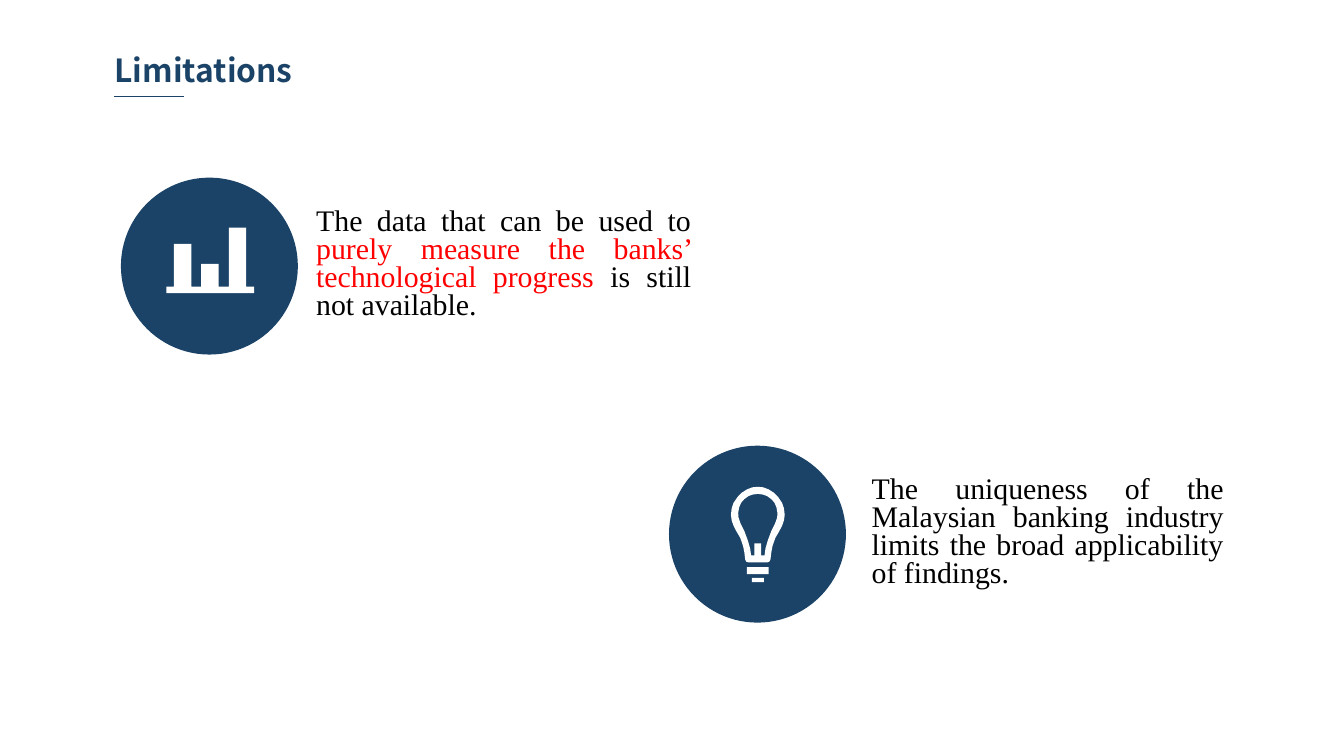
"""Build the Limitations slide with two icon-and-text points."""
from lxml import etree
from pptx import Presentation
from pptx.dml.color import RGBColor
from pptx.enum.shapes import MSO_CONNECTOR, MSO_SHAPE
from pptx.enum.text import MSO_AUTO_SIZE as AutoSize, PP_ALIGN as Align
from pptx.oxml.ns import qn
from pptx.util import Pt

NAVY, WHITE, BLACK, RED = "1B4367", "FFFFFF", "000000", "FF0000"
DISC = 94.8

CHART_ICON = [[
    (131.9, 153.5), (131.9, 122), (122.6, 122), (122.6, 153.5),
    (117.1, 153.5), (117.1, 141.4), (107.8, 141.4), (107.8, 153.5),
    (102.6, 153.5), (102.6, 130.6), (93.2, 130.6), (93.2, 153.5),
    (89.1, 153.5), (89.1, 157), (136.2, 157), (136.2, 153.5),
]]
BULB_CENTRE, BULB_TOP = 406, 260.8
BULB_HALVES = [
    [(0, 0), (2.9, 0.3), (5.8, 1.4), (8.6, 3.2), (10.8, 5.4), (13, 8.6),
     (14, 11.5), (14.4, 15.1), (14, 18), (13, 20.9), (11.5, 23.8), (9.4, 27.4),
     (7.9, 31.7), (7.2, 35.3), (6.8, 38.9), (6.1, 40.2), (5, 40.5)],
    [(0, 3.8), (2.9, 4.2), (5, 5), (7.2, 6.6), (8.9, 8.5), (10, 11),
     (10.5, 14), (10.4, 16.3), (9.3, 19.5), (7.2, 23.8), (5.4, 28.6),
     (4.1, 33.1), (3.6, 36.8), (1.8, 36.8), (1.8, 30.3)],
    [(5.8, 43.1), (5.8, 46.8)],
    [(3.2, 48.8), (3.2, 51.1)],
]
BULB_ICON = [
    [(BULB_CENTRE + x, BULB_TOP + y) for x, y in half]
    + [(BULB_CENTRE - x, BULB_TOP + y) for x, y in reversed(half)]
    for half in BULB_HALVES
]

TITLE = [("Limitations", NAVY)]
POINTS = [
    {"disc": (64.8, 95.2), "icon": CHART_ICON, "box": (169.4, 112.2, 200.9, 60.5),
     "text": [("The data that can be used to ", BLACK),
              ("purely measure the banks’ technological progress", RED),
              (" is still not available.", BLACK)]},
    {"disc": (358.4, 238.8), "icon": BULB_ICON, "box": (467, 256, 188.6, 60.5),
     "text": [("The uniqueness of the Malaysian banking industry limits "
               "the broad applicability of findings.", BLACK)]},
]


def color(value):
    return RGBColor.from_string(value)


def paint(shape, fill):
    shape.shadow.inherit = False
    shape.fill.solid()
    shape.fill.fore_color.rgb = color(fill)
    shape.line.fill.background()


def draw_icon(shapes, outlines):
    outlines = [[(Pt(x), Pt(y)) for x, y in outline] for outline in outlines]
    builder = shapes.build_freeform(*outlines[0][0])
    for outline in outlines:
        if outline is not outlines[0]:
            builder.move_to(*outline[0])
        builder.add_line_segments(outline[1:], close=True)
    paint(builder.convert_to_shape(), WHITE)


def add_text(slide, box, runs, font, size, bold=None, margins=(0, 0)):
    frame = slide.shapes.add_textbox(*map(Pt, box)).text_frame
    frame.word_wrap = True
    frame.auto_size = AutoSize.SHAPE_TO_FIT_TEXT
    frame.margin_left = frame.margin_right = Pt(margins[0])
    frame.margin_top = frame.margin_bottom = Pt(margins[1])
    paragraph = frame.paragraphs[0]
    paragraph.font.name, paragraph.font.size, paragraph.font.bold = font, Pt(size), bold
    for text, tint in runs:
        run = paragraph.add_run()
        run.text = text
        run.font.color.rgb = color(tint)
    return paragraph


def main():
    deck = Presentation()
    deck.slide_width, deck.slide_height = Pt(720), Pt(405)
    slide = deck.slides.add_slide(deck.slide_layouts[6])

    add_text(slide, (56.2, 24.6, 177.8, 25.9), TITLE, "Noto Sans CJK SC", 17, True, (5.2, 2.6))
    underline = slide.shapes.add_connector(
        MSO_CONNECTOR.STRAIGHT, Pt(61.2), Pt(51.7), Pt(98.6), Pt(51.7))
    underline.line.color.rgb = color(NAVY)
    underline.line.width = Pt(0.75)
    etree.SubElement(underline.element.spPr, qn("a:effectLst"))

    for point in POINTS:
        badge = slide.shapes.add_group_shape().shapes
        disc = badge.add_shape(
            MSO_SHAPE.FLOWCHART_CONNECTOR, *map(Pt, (*point["disc"], DISC, DISC)))
        paint(disc, NAVY)
        draw_icon(badge, point["icon"])
        paragraph = add_text(slide, point["box"], point["text"], "Times New Roman", 16)
        paragraph.alignment = Align.JUSTIFY
        paragraph.line_spacing = Pt(15)

    deck.save("out.pptx")


if __name__ == "__main__":
    main()
